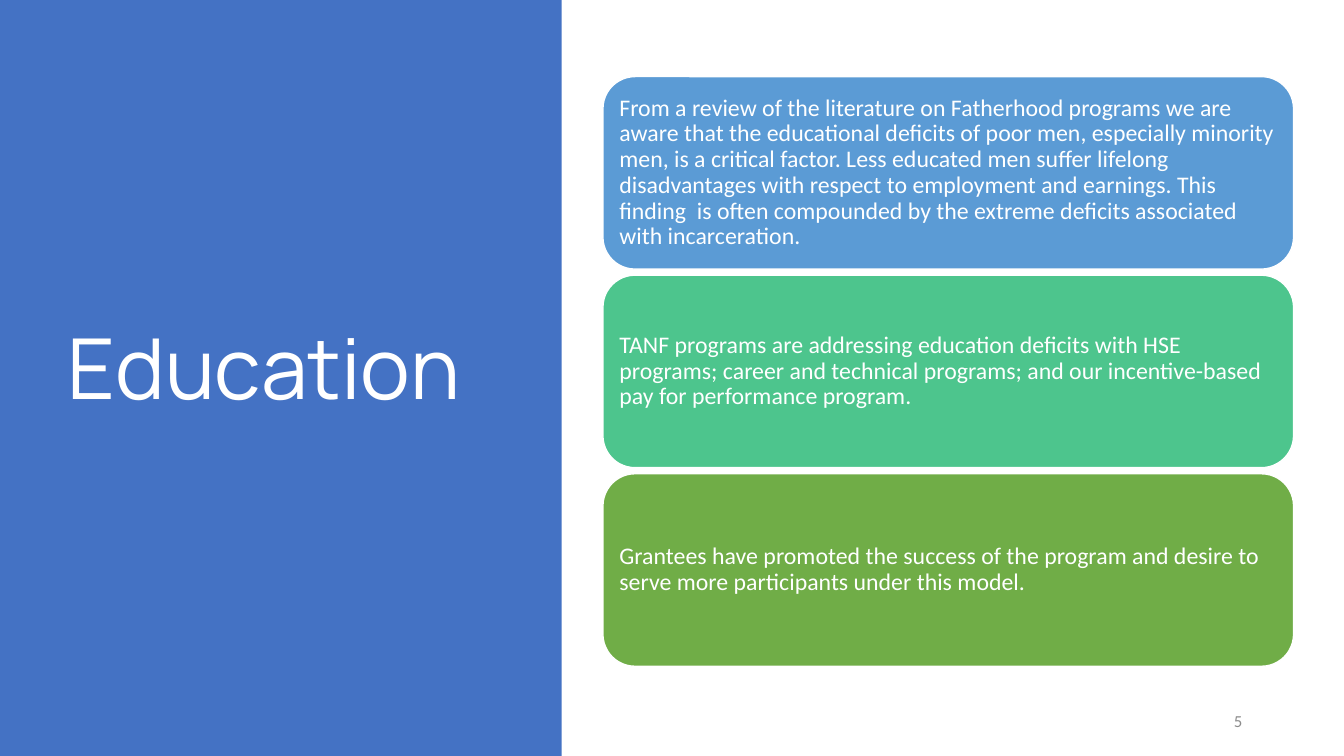
from pptx import Presentation
from pptx.dml.color import RGBColor
from pptx.enum.shapes import MSO_SHAPE
from pptx.enum.text import MSO_ANCHOR, PP_ALIGN
from pptx.util import Inches, Pt

WHITE = RGBColor(0xFF, 0xFF, 0xFF)
PANEL_BLUE = RGBColor(0x44, 0x72, 0xC4)
SKY = RGBColor(0x5B, 0x9B, 0xD5)
MINT = RGBColor(0x4D, 0xC5, 0x8D)
GREEN = RGBColor(0x70, 0xAD, 0x47)
GRAY = RGBColor(0x8C, 0x8C, 0x8C)

HEADING = "Education"
PAGE_NUMBER = "5"
POINTS = [
    ("From a review of the literature on Fatherhood programs we are aware that "
     "the educational deficits of poor men, especially minority men, is a "
     "critical factor. Less educated men suffer lifelong disadvantages with "
     "respect to employment and earnings. This finding  is often compounded by "
     "the extreme deficits associated with incarceration.", SKY),
    ("TANF programs are addressing education deficits with HSE programs; career "
     "and technical programs; and our incentive-based pay for performance "
     "program.", MINT),
    ("Grantees have promoted the success of the program and desire to serve "
     "more participants under this model.", GREEN),
]

CARD_LEFT, CARD_TOP = 5.98, 0.76
CARD_WIDTH, CARD_HEIGHT = 6.85, 1.91
CARD_PITCH = 1.97


def write(holder, text, *, size, color, font="Calibri", align=PP_ALIGN.LEFT,
          spacing=0.9, inset=None):
    frame = holder.text_frame
    frame.word_wrap = True
    frame.vertical_anchor = MSO_ANCHOR.MIDDLE
    if inset is not None:
        frame.margin_left = frame.margin_right = Inches(inset)
        frame.margin_top = frame.margin_bottom = Inches(inset)
    paragraph = frame.paragraphs[0]
    paragraph.alignment = align
    paragraph.line_spacing = spacing
    run = paragraph.add_run()
    run.text = text
    run.font.name = font
    run.font.size = Pt(size)
    run.font.color.rgb = color


def add_block(slide, preset, left, top, width, height, fill):
    block = slide.shapes.add_shape(
        preset, Inches(left), Inches(top), Inches(width), Inches(height))
    block.shadow.inherit = False
    block.fill.solid()
    block.fill.fore_color.rgb = fill
    block.line.fill.background()
    return block


def main():
    deck = Presentation()
    deck.slide_width, deck.slide_height = Inches(13.33), Inches(7.5)
    slide = deck.slides.add_slide(deck.slide_layouts[6])

    add_block(slide, MSO_SHAPE.RECTANGLE, 0, 0, 5.57, 7.5, PANEL_BLUE)
    heading = slide.shapes.add_textbox(
        Inches(0.57), Inches(0.68), Inches(4.16), Inches(6.02))
    write(heading, HEADING, size=60, color=WHITE, font="Manrope")

    for index, (point, fill) in enumerate(POINTS):
        card = add_block(slide, MSO_SHAPE.ROUNDED_RECTANGLE, CARD_LEFT,
                         CARD_TOP + index * CARD_PITCH, CARD_WIDTH, CARD_HEIGHT, fill)
        card.line.color.rgb = WHITE
        card.line.width = Pt(1)
        write(card, point, size=17, color=WHITE, inset=0.07)

    page_number = slide.shapes.add_textbox(
        Inches(9.42), Inches(6.95), Inches(3), Inches(0.4))
    write(page_number, PAGE_NUMBER, size=12, color=GRAY,
          align=PP_ALIGN.RIGHT, spacing=1.0)

    deck.save("out.pptx")


if __name__ == "__main__":
    main()
